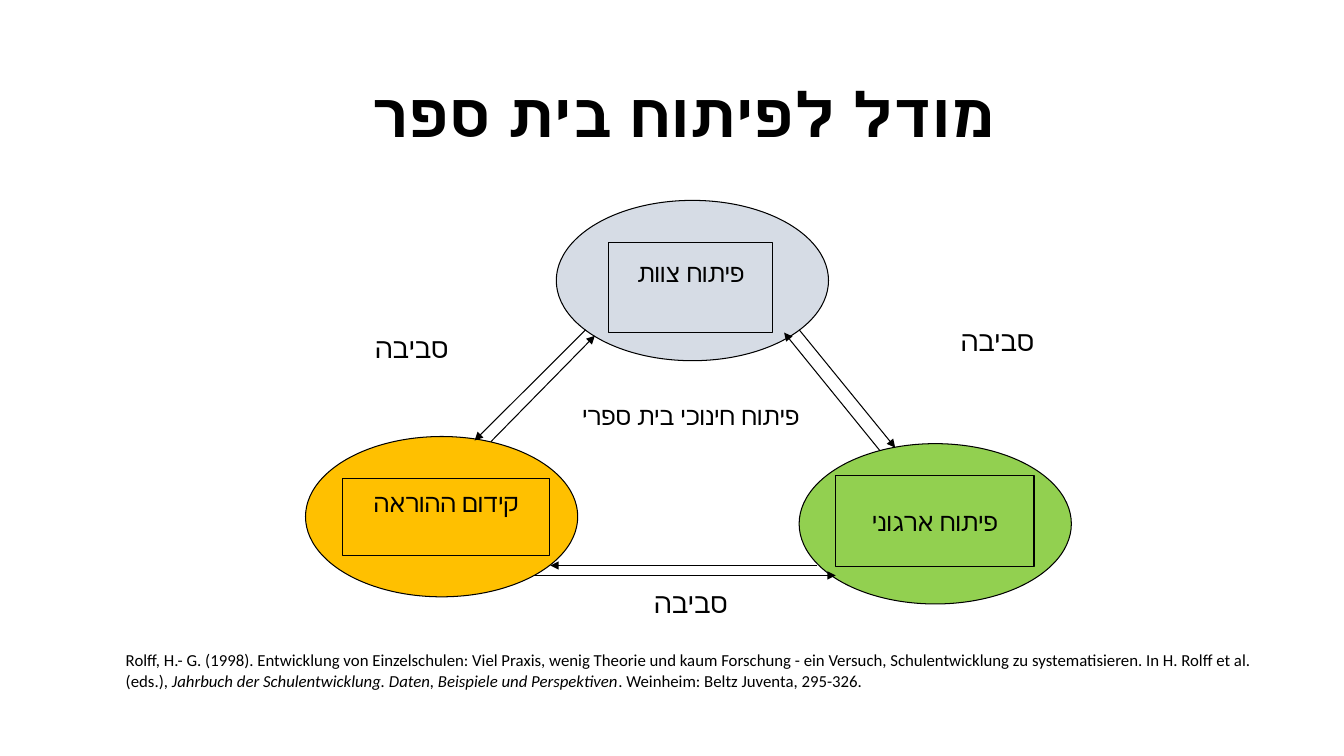
from lxml import etree
from pptx import Presentation
from pptx.dml.color import RGBColor
from pptx.enum import shapes, text
from pptx.oxml import ns
from pptx.util import Cm, Pt

HUES = {"ink": "000000", "gold": "FFC000", "green": "92D050", "gray": "D6DCE5"}
INK = RGBColor.from_string(HUES["ink"])

deck = Presentation()
deck.slide_width, deck.slide_height = Cm(33.87), Cm(19.05)
slide = deck.slides.add_slide(deck.slide_layouts[6])


def write(shape, words, size, align=text.PP_ALIGN.CENTER, bold=False):
    """Set one paragraph from (words, italic) runs; centred text reads right to left."""
    frame = shape.text_frame
    frame.word_wrap = True
    para = frame.paragraphs[0]
    for part, slant in words:
        run = para.add_run()
        run.text = part
        if slant:
            run.font.italic = True
    para.alignment = align
    if align == text.PP_ALIGN.CENTER:
        para._p.get_or_add_pPr().set("rtl", "1")
    para.font.name, para.font.size = "Calibri", Pt(size)
    para.font.bold = bold
    para.font.color.rgb = INK
    return frame


def draw(kind, place, hue):
    shape = slide.shapes.add_shape(kind, *map(Cm, place))
    shape.shadow.inherit = False
    shape.fill.solid()
    shape.fill.fore_color.rgb = RGBColor.from_string(HUES[hue])
    shape.line.color.rgb = INK
    shape.line.width = Pt(0.75)
    return shape


# Ellipse corner, label box, colour, label, bottom inset
nodes = [
    ((7.7, 11), (8.64, 12.07, 5.21, 1.93), "gold", "קידום ההוראה", 0.89),
    ((20.14, 11.18), (21.06, 11.99, 5, 2.29), "green", "פיתוח ארגוני", 0.13),
    ((14.02, 5.05), (15.34, 6.1, 4.14, 2.29), "gray", "פיתוח צוות", 0.89),
]
for corner, place, hue, label, inset in nodes:
    draw(shapes.MSO_SHAPE.OVAL, (*corner, 6.86, 4.04), hue)
    box = draw(shapes.MSO_SHAPE.RECTANGLE, place, hue)
    frame = write(box, [(label, False)], 18)
    frame.vertical_anchor = text.MSO_ANCHOR.MIDDLE
    frame.margin_bottom = Cm(inset)

arrows = [
    (13.46, 14.5, 21.06, 14.5),
    (14.76, 8.31, 11.96, 11.1),
    (20.14, 8.31, 22.56, 11.28),
    (20.6, 14.25, 13.87, 14.25),
    (12.37, 11.13, 14.99, 8.46),
    (22.17, 11.35, 19.76, 8.38),
]
for ends in arrows:
    arrow = slide.shapes.add_connector(shapes.MSO_CONNECTOR.STRAIGHT, *map(Cm, ends))
    arrow.line.color.rgb = INK
    arrow.line.width = Pt(0.75)
    etree.SubElement(arrow.line._get_or_add_ln(), ns.qn("a:tailEnd"), type="triangle")
    etree.SubElement(arrow._element.spPr, ns.qn("a:effectLst"))

labels = [
    ((14.4, 9.96, 6.02, 1.02), "פיתוח חינוכי בית ספרי", 18),
    ((7.67, 8.2, 5.41, 1.12), "סביבה", 20),
    ((22.53, 8.03, 5.21, 1.12), "סביבה", 20),
    ((14.07, 14.63, 6.68, 1.12), "סביבה", 20),
]
for place, label, size in labels:
    write(slide.shapes.add_textbox(*map(Cm, place)), [(label, False)], size)

cite = slide.shapes.add_textbox(Cm(2.41), Cm(16.26), Cm(29.64), Cm(1.27))
frame = write(cite, [
    ("Rolff, H.- G. (1998). Entwicklung von Einzelschulen: Viel Praxis, wenig Theorie "
     "und kaum Forschung - ein Versuch, Schulentwicklung zu systematisieren. "
     "In H. Rolff et al. (eds.), ", False),
    ("Jahrbuch der Schulentwicklung. Daten, Beispiele und Perspektiven", True),
    (". Weinheim: Beltz Juventa, 295-326.", False),
], 12, text.PP_ALIGN.LEFT)
frame.margin_left = Cm(0.76)
frame.paragraphs[0].space_after = Pt(6)

title = slide.shapes.add_textbox(Cm(2.62), Cm(1.12), Cm(29.21), Cm(3.68))
frame = write(title, [("מודל לפיתוח בית ספר", False)], 44, bold=True)
frame.vertical_anchor = text.MSO_ANCHOR.MIDDLE
frame.paragraphs[0].line_spacing = 0.9

deck.save("out.pptx")
